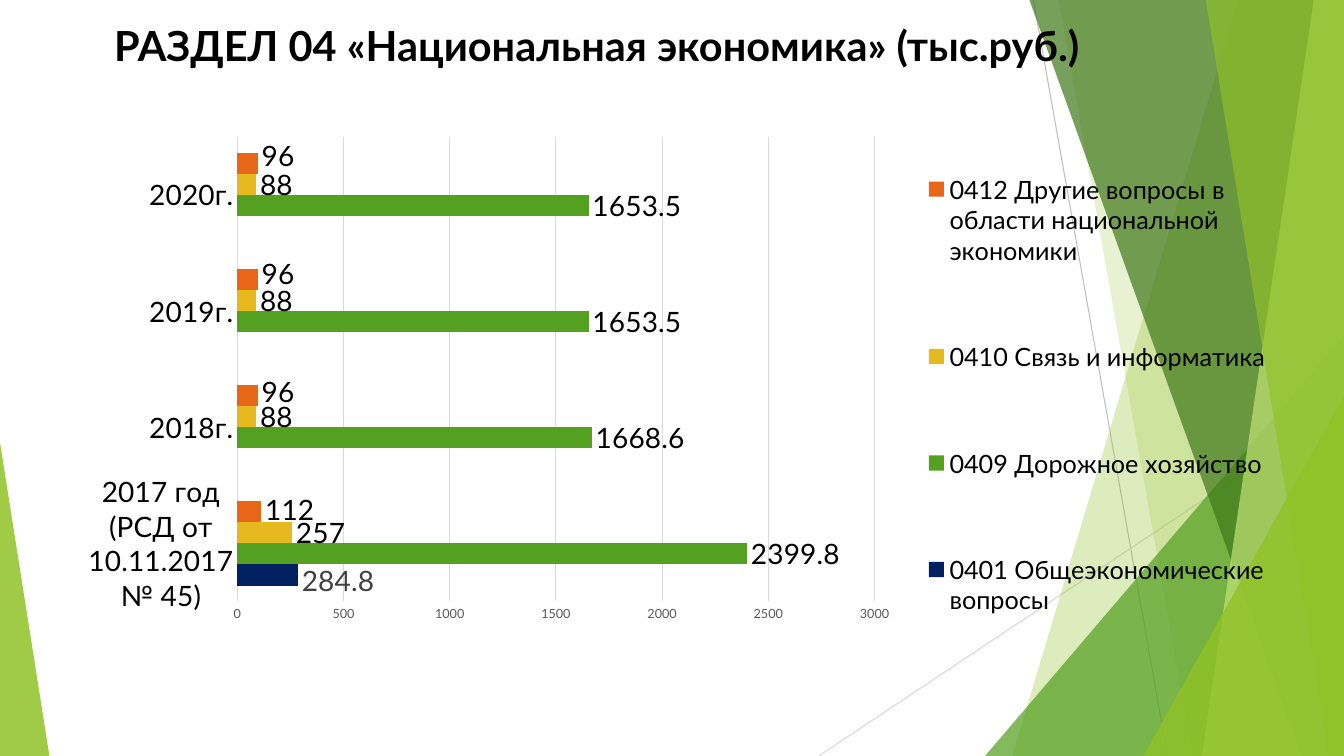
from lxml import etree
from pptx import Presentation
from pptx.chart.data import CategoryChartData
from pptx.dml.color import RGBColor
from pptx.enum.chart import XL_CHART_TYPE, XL_LABEL_POSITION, XL_LEGEND_POSITION, XL_TICK_MARK
from pptx.enum.shapes import MSO_CONNECTOR, MSO_SHAPE
from pptx.enum.text import MSO_ANCHOR, MSO_AUTO_SIZE, PP_ALIGN
from pptx.oxml.ns import qn
from pptx.util import Inches, Pt

FONT = "Lato"
BLACK = RGBColor(0x00, 0x00, 0x00)
LIME = RGBColor(0x90, 0xC2, 0x26)
GREEN = RGBColor(0x54, 0xA0, 0x21)
DARK_GREEN = RGBColor(0x3F, 0x78, 0x19)
PALE_LIME = RGBColor(0xC0, 0xE4, 0x74)
NAVY = RGBColor(0x00, 0x20, 0x60)
YELLOW = RGBColor(0xE6, 0xB9, 0x1E)
ORANGE = RGBColor(0xE7, 0x66, 0x18)
GRID_GRAY = RGBColor(0xD9, 0xD9, 0xD9)
RAY_GRAY = RGBColor(0xBF, 0xBF, 0xBF)
AXIS_GRAY = RGBColor(0x59, 0x59, 0x59)
LABEL_GRAY = RGBColor(0x40, 0x40, 0x40)

WIDTH, HEIGHT = 13.33, 7.5
YEARS = ["2017 год (РСД от 10.11.2017 № 45)", "2018г.", "2019г.", "2020г."]
EXPENSES = [
    ("0401 Общеэкономические вопросы", [284.8, None, None, None], NAVY, LABEL_GRAY, [0.008]),
    ("0409 Дорожное хозяйство", [2399.8, 1668.6, 1653.5, 1653.5], GREEN, BLACK, []),
    ("0410 Связь и информатика", [257, 88, 88, 88], YELLOW, BLACK, []),
    ("0412 Другие вопросы в области национальной экономики", [112, 96, 96, 96],
     ORANGE, BLACK, [-0.003, -0.006, -0.01, -0.013]),
]


def style_font(font, size, color):
    """Set typeface, size and colour."""
    font.name = FONT
    font.size = Pt(size)
    font.color.rgb = color


def paint(shape, color, opacity):
    """Give a shape a translucent fill without line or shadow."""
    shape.shadow.inherit = False
    shape.line.fill.background()
    shape.fill.solid()
    shape.fill.fore_color.rgb = color
    tint = shape.element.spPr.find(qn("a:solidFill"))[0]
    etree.SubElement(tint, qn("a:alpha"), val=str(opacity * 1000))


def add_ray(slide, start, end, color):
    """Draw a thin line between two points."""
    ray = slide.shapes.add_connector(
        MSO_CONNECTOR.STRAIGHT, *[Inches(length) for length in (*start, *end)])
    ray.line.color.rgb = color
    ray.line.width = Pt(0.75)
    etree.SubElement(ray.element.spPr, qn("a:effectLst"))


def add_facet(slide, top_left, bottom_left, color, opacity):
    """Draw a full-height facet reaching the right edge."""
    builder = slide.shapes.build_freeform(Inches(top_left), 0)
    corners = [(WIDTH, 0), (WIDTH, HEIGHT), (bottom_left, HEIGHT)]
    builder.add_line_segments([(Inches(x), Inches(y)) for x, y in corners], close=True)
    paint(builder.convert_to_shape(), color, opacity)


def add_corner(slide, left, top, width, apex, color, opacity):
    """Draw a right-angled triangle standing on the bottom edge."""
    corner = slide.shapes.add_shape(
        MSO_SHAPE.ISOSCELES_TRIANGLE, Inches(left), Inches(top),
        Inches(width), Inches(HEIGHT - top))
    corner.adjustments[0] = apex
    paint(corner, color, opacity)


def add_decoration(slide):
    """Draw the green facets from back to front."""
    add_ray(slide, (10.25, 0), (11.58, HEIGHT), RAY_GRAY)
    add_ray(slide, (WIDTH, 4.03), (8.12, HEIGHT), GRID_GRAY)
    add_facet(slide, 12.28, 10.04, LIME, 30)
    add_facet(slide, 10.5, 11.83, LIME, 20)
    add_corner(slide, 9.77, 3.33, 3.56, 1, GREEN, 72)
    add_facet(slide, 10.21, 12.91, DARK_GREEN, 70)
    add_facet(slide, 13.03, 11.92, PALE_LIME, 70)
    add_facet(slide, 11.96, 13.18, LIME, 65)
    add_corner(slide, 11.34, 3.93, 1.99, 1, LIME, 80)
    add_corner(slide, 0, 4.39, 0.49, 0, LIME, 85)


def fill_title(slide, wording):
    """Place the heading in front of the decoration."""
    title = slide.shapes.title
    slide.shapes.element.append(title.element)
    title.left, title.top = Inches(-0.28), Inches(0.15)
    title.width, title.height = Inches(12.41), Inches(0.51)
    frame = title.text_frame
    frame.word_wrap = True
    frame.auto_size = MSO_AUTO_SIZE.NONE
    frame.vertical_anchor = MSO_ANCHOR.TOP
    heading = frame.paragraphs[0]
    heading.alignment = PP_ALIGN.CENTER
    heading.space_after = Pt(6)
    run = heading.add_run()
    run.text = wording
    style_font(run.font, 29.6, BLACK)
    run.font.bold = True


def add_layout(parent, position, **settings):
    """Insert a manual chart layout at a child position."""
    layout = etree.Element(qn("c:layout"))
    manual = etree.SubElement(layout, qn("c:manualLayout"))
    for tag, setting in settings.items():
        etree.SubElement(manual, qn(f"c:{tag}"), val=str(setting))
    parent.insert(position, layout)


def format_axes(chart):
    """Format the year and amount axes."""
    years, amounts = chart.category_axis, chart.value_axis
    for axis, size, color in ((years, 20, BLACK), (amounts, 9, AXIS_GRAY)):
        style_font(axis.tick_labels.font, size, color)
        axis.major_tick_mark = axis.minor_tick_mark = XL_TICK_MARK.NONE
        axis.format.line.fill.background()
    years.has_major_gridlines = False
    amounts.minimum_scale, amounts.maximum_scale, amounts.major_unit = 0, 3000, 500
    amounts.major_gridlines.format.line.color.rgb = GRID_GRAY
    amounts.major_gridlines.format.line.width = Pt(0.75)


def format_series(series, color, label_color, shifts):
    """Colour the bars and label them, shifting some labels vertically."""
    series.format.fill.solid()
    series.format.fill.fore_color.rgb = color
    series.invert_if_negative = False
    labels = series.data_labels
    labels.show_value = True
    labels.position = XL_LABEL_POSITION.OUTSIDE_END
    style_font(labels.font, 20, label_color)
    for index, shift in enumerate(shifts):
        label = series.points[index].data_label
        style_font(label.font, 20, label_color)
        label.position = XL_LABEL_POSITION.OUTSIDE_END
        add_layout(labels._element.findall(qn("c:dLbl"))[index], 1, x=0, y=shift)


def format_legend(chart):
    """Spread the legend along the right side."""
    chart.has_legend = True
    legend = chart.legend
    legend.position = XL_LEGEND_POSITION.RIGHT
    legend.include_in_layout = False
    style_font(legend.font, 18, BLACK)
    for old in legend._element.findall(qn("c:layout")):
        legend._element.remove(old)
    add_layout(legend._element, 1, xMode="edge", yMode="edge",
               x=0.705, y=0.05, w=0.29, h=0.945)


def add_expense_chart(slide):
    """Add the bar chart of expenses by year."""
    expenses = CategoryChartData()
    expenses.categories = YEARS
    for name, amounts, *_ in EXPENSES:
        expenses.add_series(name, amounts)
    chart = slide.shapes.add_chart(
        XL_CHART_TYPE.BAR_CLUSTERED, Inches(0.63), Inches(0.66),
        Inches(12.06), Inches(6.23), expenses).chart
    chart.has_title = False
    style_font(chart.font, 10, BLACK)
    plot = chart.plots[0]
    plot.gap_width, plot.overlap, plot.vary_by_categories = 150, 0, False
    format_axes(chart)
    for series, (_, _, color, label_color, shifts) in zip(plot.series, EXPENSES):
        format_series(series, color, label_color, shifts)
    format_legend(chart)
    area = chart._chartSpace.chart.plotArea
    for old in area.findall(qn("c:layout")):
        area.remove(old)
    add_layout(area, 0, layoutTarget="inner", xMode="edge", yMode="edge",
               x=0.143, y=0.112, w=0.524, h=0.74)


def main():
    """Build and save the slide."""
    deck = Presentation()
    deck.slide_width, deck.slide_height = Inches(WIDTH), Inches(HEIGHT)
    slide = deck.slides.add_slide(deck.slide_layouts[5])
    add_decoration(slide)
    fill_title(slide, "РАЗДЕЛ 04 «Национальная экономика» (тыс.руб.)")
    add_expense_chart(slide)
    deck.save("out.pptx")


if __name__ == "__main__":
    main()
